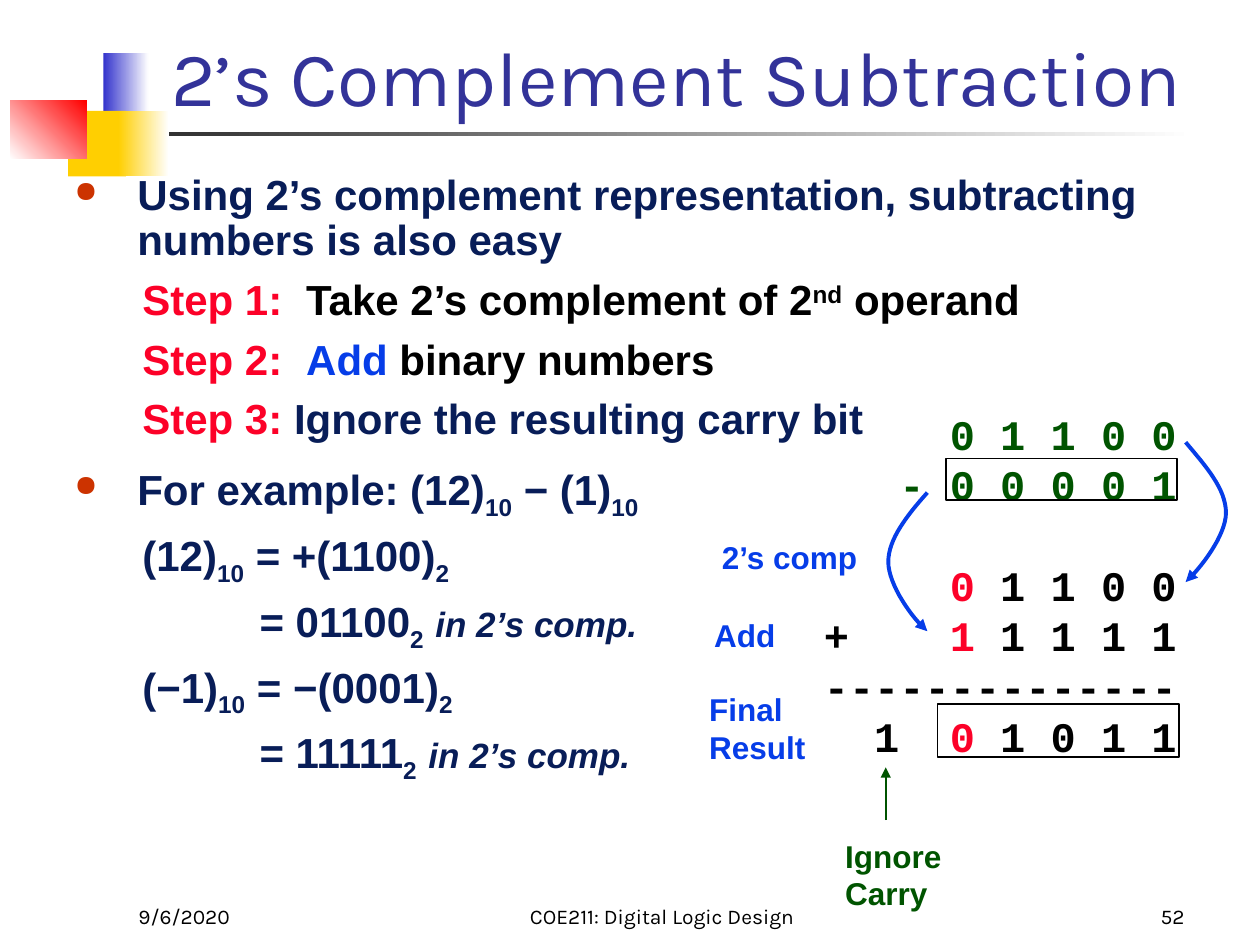
from typing import NamedTuple, Optional

from lxml import etree
from pptx import Presentation
from pptx.dml.color import RGBColor
from pptx.enum.shapes import MSO_CONNECTOR, MSO_SHAPE
from pptx.enum.text import MSO_ANCHOR, PP_ALIGN
from pptx.oxml.ns import qn
from pptx.util import Inches, Pt

RECT, STRAIGHT = MSO_SHAPE.RECTANGLE, MSO_CONNECTOR.STRAIGHT
TOP, BOTTOM = MSO_ANCHOR.TOP, MSO_ANCHOR.BOTTOM
LEFT, CENTER, RIGHT = PP_ALIGN.LEFT, PP_ALIGN.CENTER, PP_ALIGN.RIGHT

COLORS = {
    "black": "000000", "white": "FFFFFF", "charcoal": "1C1C1C",
    "indigo": "3333CC", "yellow": "FFCF01", "bright_red": "FF0000",
    "title": "333399", "navy": "081D58", "red": "FC0128",
    "blue": "063DE8", "green": "005400", "bullet": "CC3300",
}


class Run(NamedTuple):
    text: str
    color: str = "navy"
    base: int = 0
    size: float = 24
    italic: bool = False


class Para(NamedTuple):
    runs: list[Run]
    margin: float = 0
    indent: float = 0
    before: float = 0
    spacing: Optional[float] = None
    bullet: bool = False
    align: PP_ALIGN = LEFT


class Box(NamedTuple):
    x: float
    y: float
    w: float
    h: float


class Block(NamedTuple):
    box: Box
    start: str
    end: Optional[str] = None
    angle: float = 0


class Label(NamedTuple):
    box: Box
    lines: list[str]
    color: str = "blue"


def rgb(name: str) -> RGBColor:
    return RGBColor.from_string(COLORS[name])


def inches(values: tuple[float, ...]) -> list[Inches]:
    return [Inches(v) for v in values]


def add_block(s, block: Block) -> None:
    sp = s.shapes.add_shape(RECT, *inches(block.box))
    sp.shadow.inherit = False
    sp.line.fill.background()
    if block.end is None:
        sp.fill.solid()
        sp.fill.fore_color.rgb = rgb(block.start)
        return
    sp.fill.gradient()
    sp.fill.gradient_angle = block.angle
    for stop, name in zip(sp.fill.gradient_stops, (block.start, block.end)):
        stop.color.rgb = rgb(name)


def add_frame(s, box: Box) -> None:
    sp = s.shapes.add_shape(RECT, *inches(box))
    sp.shadow.inherit = False
    sp.fill.background()
    sp.line.color.rgb = rgb("black")
    sp.line.width = Pt(1)


def add_text(s, box: Box, paras: list[Para], font: str = "Arial", bold: bool = True,
             anchor: MSO_ANCHOR = TOP, wrap: bool = True, inset: bool = True) -> None:
    tf = s.shapes.add_textbox(*inches(box)).text_frame
    tf.word_wrap = wrap
    tf.vertical_anchor = anchor
    if not inset:
        tf.margin_left = tf.margin_right = tf.margin_top = tf.margin_bottom = 0
    for i, para in enumerate(paras):
        p = tf.paragraphs[0] if i == 0 else tf.add_paragraph()
        pPr = p._p.get_or_add_pPr()
        pPr.set("marL", str(Inches(para.margin)))
        pPr.set("indent", str(Inches(para.indent)))
        if para.bullet:
            clr = etree.SubElement(pPr, qn("a:buClr"))
            etree.SubElement(clr, qn("a:srgbClr")).set("val", COLORS["bullet"])
            etree.SubElement(pPr, qn("a:buSzPct")).set("val", "70000")
            etree.SubElement(pPr, qn("a:buChar")).set("char", "●")
        p.alignment = para.align
        p.space_before = Pt(para.before)
        if para.spacing:
            p.line_spacing = para.spacing
        for run in para.runs:
            r = p.add_run()
            r.text = run.text
            r.font.name = font
            r.font.size = Pt(run.size)
            r.font.bold = bold
            r.font.italic = run.italic
            r.font.color.rgb = rgb(run.color)
            if run.base:
                r.font._element.set("baseline", str(run.base * 1000))


def style_arrow(sp, color: str, width: float) -> None:
    sp.line.color.rgb = rgb(color)
    sp.line.width = Pt(width)
    etree.SubElement(sp.line._get_or_add_ln(), qn("a:tailEnd")).set("type", "triangle")


def add_arrow(s, x: float, y1: float, y2: float) -> None:
    sp = s.shapes.add_connector(STRAIGHT, Inches(x), Inches(y1), Inches(x), Inches(y2))
    style_arrow(sp, "green", 1)
    etree.SubElement(sp._element.spPr, qn("a:effectLst"))


def add_curve(s, points: list[tuple[float, float]], steps: int = 16) -> None:
    outline = []
    for k in range(0, len(points) - 1, 3):
        for n in range(1, steps + 1):
            t = n / steps
            weights = ((1 - t) ** 3, 3 * t * (1 - t) ** 2, 3 * t * t * (1 - t), t ** 3)
            outline.append(inches(tuple(
                sum(w * pt[axis] for w, pt in zip(weights, points[k:k + 4]))
                for axis in (0, 1))))
    builder = s.shapes.build_freeform(*inches(points[0]))
    builder.add_line_segments(outline, close=False)
    sp = builder.convert_to_shape()
    sp.shadow.inherit = False
    sp.fill.background()
    style_arrow(sp, "blue", 2.25)


def topic(*runs: Run, before: float = 12) -> Para:
    return Para(list(runs), 0.5, -0.5, before, 0.9, True)


def detail(*runs: Run, margin: float = 0.54, indent: float = 0) -> Para:
    return Para(list(runs), margin, indent, 9.6, 0.85)


def step(label: str, *runs: Run) -> Para:
    return detail(Run(label + "\t", "red"), *runs, margin=1.84, indent=-1.3)


def signed(bits: str) -> Para:
    return detail(Run(f"= {bits}"), Run("2", base=-25), Run(" "),
                  Run("in 2’s comp.", size=20, italic=True), margin=1.47)


def decimal(value: str, binary: str) -> Para:
    return detail(Run(f"({value})"), Run("10", base=-25),
                  Run(f" = {binary}"), Run("2", base=-25))


def digits(*runs: Run, lead: float = 0, before: float = 0) -> Para:
    return Para(list(runs), 1, -lead, before)


BLOCKS = [
    Block(Box(0.48, 1.05, 9, 0.03), "charcoal", "white"),
    Block(Box(0.82, 0.42, 0.36, 0.52), "indigo", "white"),
    Block(Box(0.54, 0.88, 0.46, 0.52), "yellow"),
    Block(Box(0.94, 0.88, 0.4, 0.52), "yellow", "white"),
    Block(Box(0.08, 0.8, 0.61, 0.46), "white", "bright_red", 45),
]
FOOTERS = [
    (Box(1, 6.92, 2.08, 0.5), "9/6/2020", LEFT),
    (Box(3.67, 6.92, 3.17, 0.5), "COE211: Digital Logic Design", CENTER),
    (Box(7.42, 6.92, 2.08, 0.5), "52", RIGHT),
]
BODY = [
    topic(Run("Using 2’s complement representation, subtracting numbers is also easy"), before=0),
    step("Step 1:", Run("Take 2’s complement of 2", "black"),
         Run("nd", "black", 30), Run(" operand", "black")),
    step("Step 2:", Run("Add", "blue"), Run(" binary numbers", "black")),
    detail(Run("Step 3: ", "red"), Run("Ignore the resulting carry bit")),
    topic(Run("For example: (12)"), Run("10", base=-25), Run(" − (1)"), Run("10", base=-25)),
    decimal("12", "+(1100)"),
    signed("01100"),
    decimal("−1", "−(0001)"),
    signed("11111"),
]
SUM = [
    digits(Run("0 1 1 0 0", "green")),
    digits(Run("-\t0 0 0 0 1", "green"), lead=0.4),
    digits(Run("0", "red"), Run(" 1 1 0 0", "black"), before=28.8),
    digits(Run("+\t", "black"), Run("1 ", "red"), Run("1 1 1 1", "black"), lead=1),
    digits(Run("--------------", "black"), lead=1),
    digits(Run("1\t", "black"), Run("0", "red"), Run(" 1 0 1 1", "black"), lead=0.6),
]
LABELS = [
    Label(Box(5.53, 5.43, 0.97, 0.7), ["Final", "Result"]),
    Label(Box(5.63, 4.22, 1.28, 0.4), ["2’s comp"]),
    Label(Box(5.57, 4.84, 0.69, 0.4), ["Add"]),
    Label(Box(6.61, 6.59, 0.97, 0.7), ["Ignore", "Carry"], "green"),
]
FRAMES = [Box(7.51, 3.64, 1.83, 0.33), Box(7.44, 5.59, 1.92, 0.42)]
CURVES = [
    [(7.36, 3.91), (7.2, 4.09), (7.05, 4.28), (7.05, 4.46),
     (7.05, 4.64), (7.24, 4.91), (7.36, 5.01)],
    [(9.41, 3.51), (9.57, 3.7), (9.73, 3.88), (9.73, 4.07),
     (9.73, 4.25), (9.53, 4.51), (9.41, 4.62)],
]


def main() -> None:
    prs = Presentation()
    prs.slide_width, prs.slide_height = Inches(10), Inches(7.5)
    s = prs.slides.add_slide(prs.slide_layouts[6])
    for block in BLOCKS:
        add_block(s, block)
    add_text(s, Box(1.26, 0.08, 8.52, 0.94),
             [Para([Run("2’s Complement Subtraction", "title", size=44)])],
             "Karla", False, BOTTOM)
    for box, text, align in FOOTERS:
        add_text(s, box, [Para([Run(text, "black", size=12)], align=align)],
                 "Karla", False, BOTTOM)
    add_text(s, Box(0.59, 1.38, 8.5, 4.78), BODY, inset=False)
    add_text(s, Box(6.44, 3.19, 3.2, 2.9), SUM, "Courier New")
    for label in LABELS:
        add_text(s, label.box, [Para([Run(line, label.color, size=18)])
                                for line in label.lines], wrap=False)
    for box in FRAMES:
        add_frame(s, box)
    add_arrow(s, 7.03, 6.51, 6.09)
    for curve in CURVES:
        add_curve(s, curve)
    prs.save("out.pptx")


if __name__ == "__main__":
    main()
